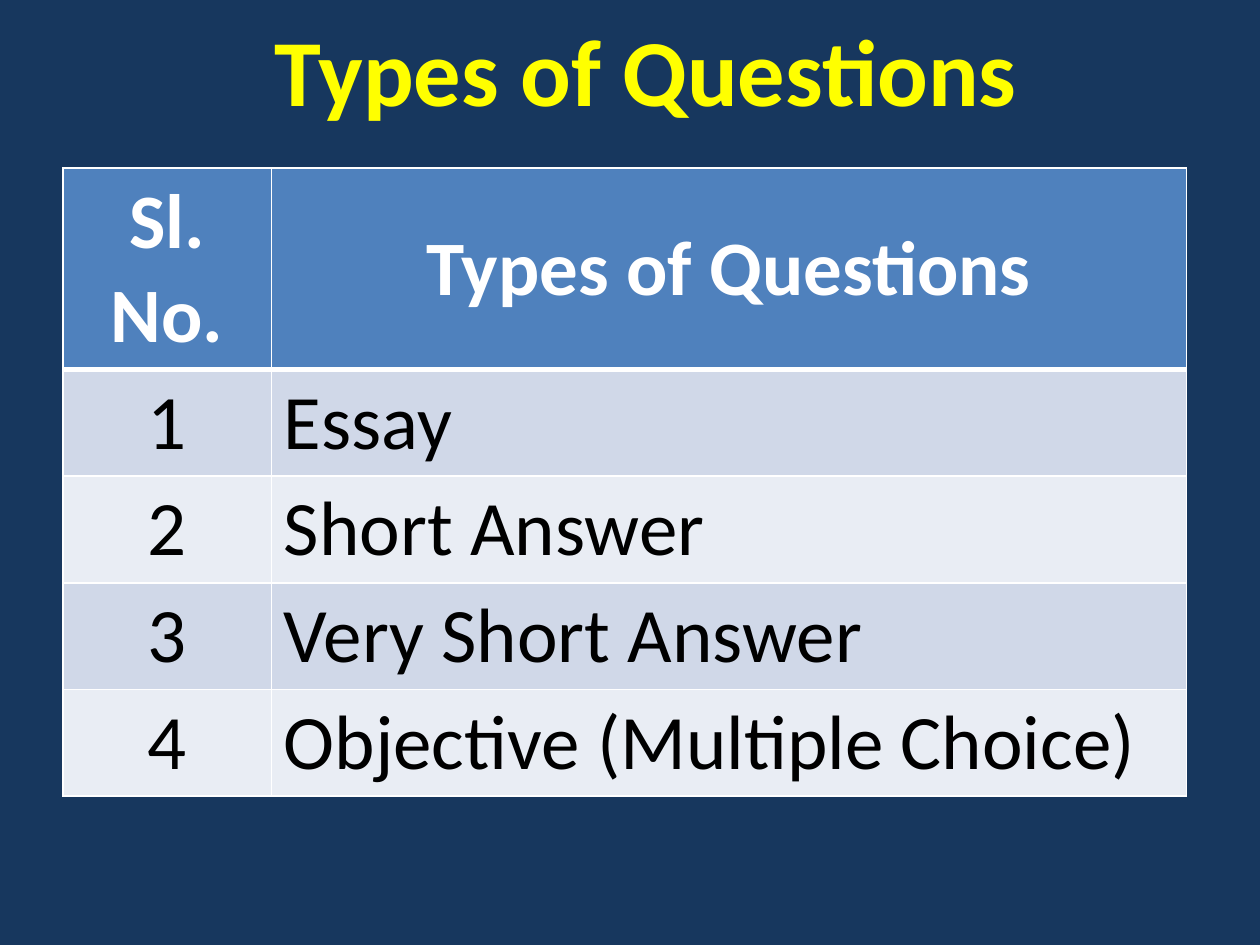
from lxml import etree
from pptx import Presentation
from pptx.dml.color import RGBColor
from pptx.enum import text
from pptx.oxml import ns
from pptx.util import Cm, Pt

NAVY = RGBColor(0x17, 0x37, 0x5E)
YELLOW = RGBColor(0xFF, 0xFF, 0x00)
WHITE = RGBColor(0xFF, 0xFF, 0xFF)
BLACK = RGBColor(0x00, 0x00, 0x00)
BLUE = RGBColor(0x4F, 0x81, 0xBD)
BAND_DARK = RGBColor(0xD0, 0xD8, 0xE8)
BAND_LIGHT = RGBColor(0xE9, 0xED, 0xF4)


def style_paragraph(paragraph, size, color, bold, alignment):
    paragraph.alignment = alignment
    paragraph.font.name = "Calibri"
    paragraph.font.size = Pt(size)
    paragraph.font.bold = bold
    paragraph.font.color.rgb = color


def add_border(cell, side, width):
    properties = cell._tc.get_or_add_tcPr()
    line = etree.SubElement(properties, ns.qn(f"a:ln{side}"), w=str(Pt(width)))
    fill = etree.SubElement(line, ns.qn("a:solidFill"))
    etree.SubElement(fill, ns.qn("a:srgbClr"), val=str(WHITE))


presentation = Presentation()
presentation.slide_width = Cm(25.4)
presentation.slide_height = Cm(19.05)
slide = presentation.slides.add_slide(presentation.slide_layouts[6])
slide.background.fill.solid()
slide.background.fill.fore_color.rgb = NAVY

title = slide.shapes.add_textbox(Cm(0.64), Cm(0.2), Cm(24.76), Cm(2.39))
title.text_frame.word_wrap = True
title.text_frame.vertical_anchor = text.MSO_ANCHOR.MIDDLE
title.text_frame.text = "Types of Questions"
style_paragraph(title.text_frame.paragraphs[0], 54, YELLOW, True, text.PP_ALIGN.CENTER)

rows = [
    ("Sl. No.", "Types of Questions"),
    ("1", "Essay"),
    ("2", "Short Answer"),
    ("3", "Very Short Answer"),
    ("4", "Objective (Multiple Choice)"),
]
table = slide.shapes.add_table(
    len(rows), 2, Cm(1.27), Cm(3.39), Cm(22.65), Cm(12.66)
).table
table.columns[0].width = Cm(4.2)
table.columns[1].width = Cm(18.45)

for row_index, row in enumerate(rows):
    header = row_index == 0
    table.rows[row_index].height = Cm(4.06 if header else 2.15)
    band = BLUE if header else BAND_DARK if row_index % 2 else BAND_LIGHT
    for column_index, value in enumerate(row):
        cell = table.cell(row_index, column_index)
        for side in "LRTB":
            thick = (header and side == "B") or (row_index == 1 and side == "T")
            add_border(cell, side, 3 if thick else 1)
        cell.fill.solid()
        cell.fill.fore_color.rgb = band
        cell.text = value
        cell.vertical_anchor = text.MSO_ANCHOR.MIDDLE if header else text.MSO_ANCHOR.TOP
        centered = header or column_index == 0
        style_paragraph(
            cell.text_frame.paragraphs[0],
            44,
            WHITE if header else BLACK,
            header,
            text.PP_ALIGN.CENTER if centered else text.PP_ALIGN.LEFT,
        )

presentation.save("out.pptx")
